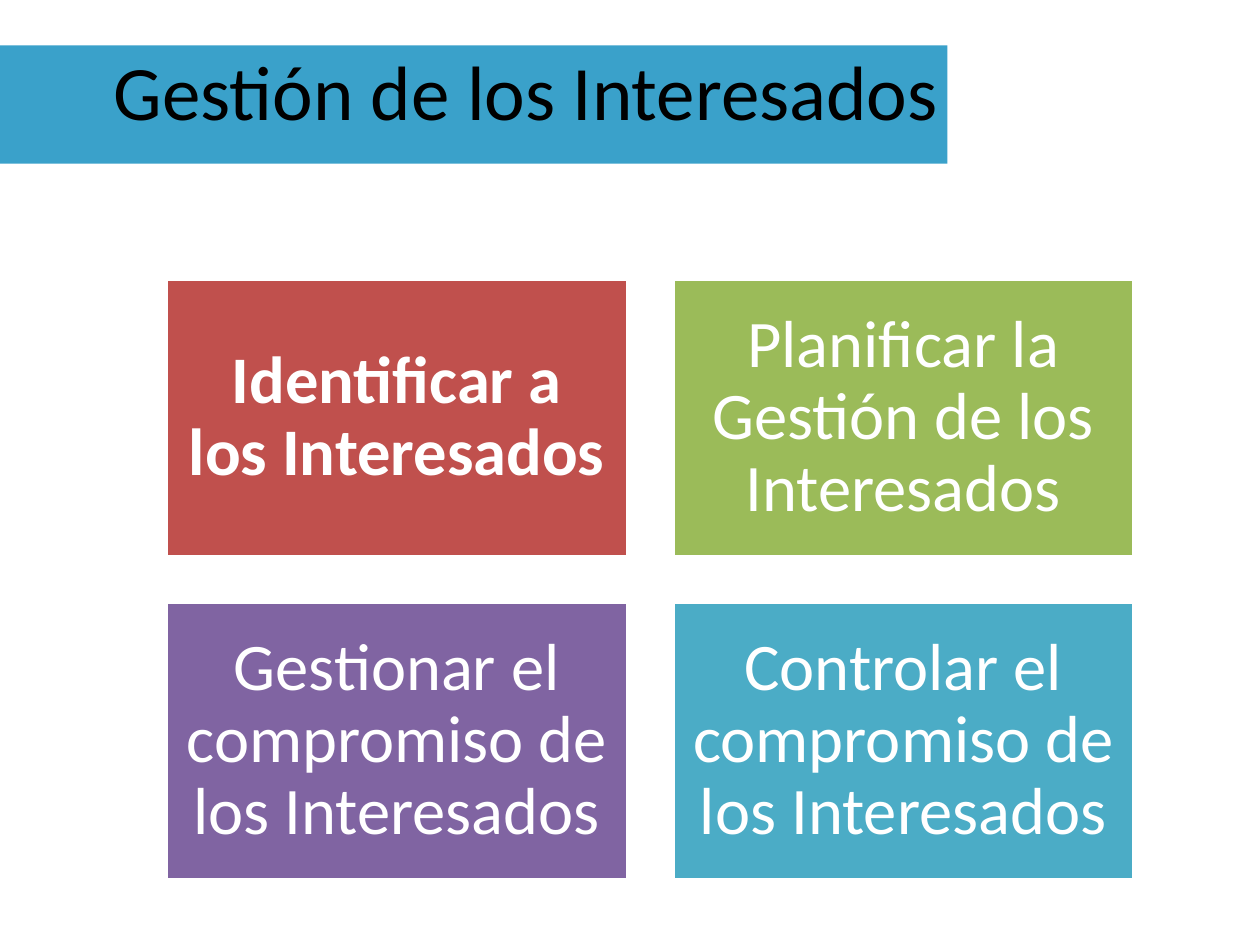
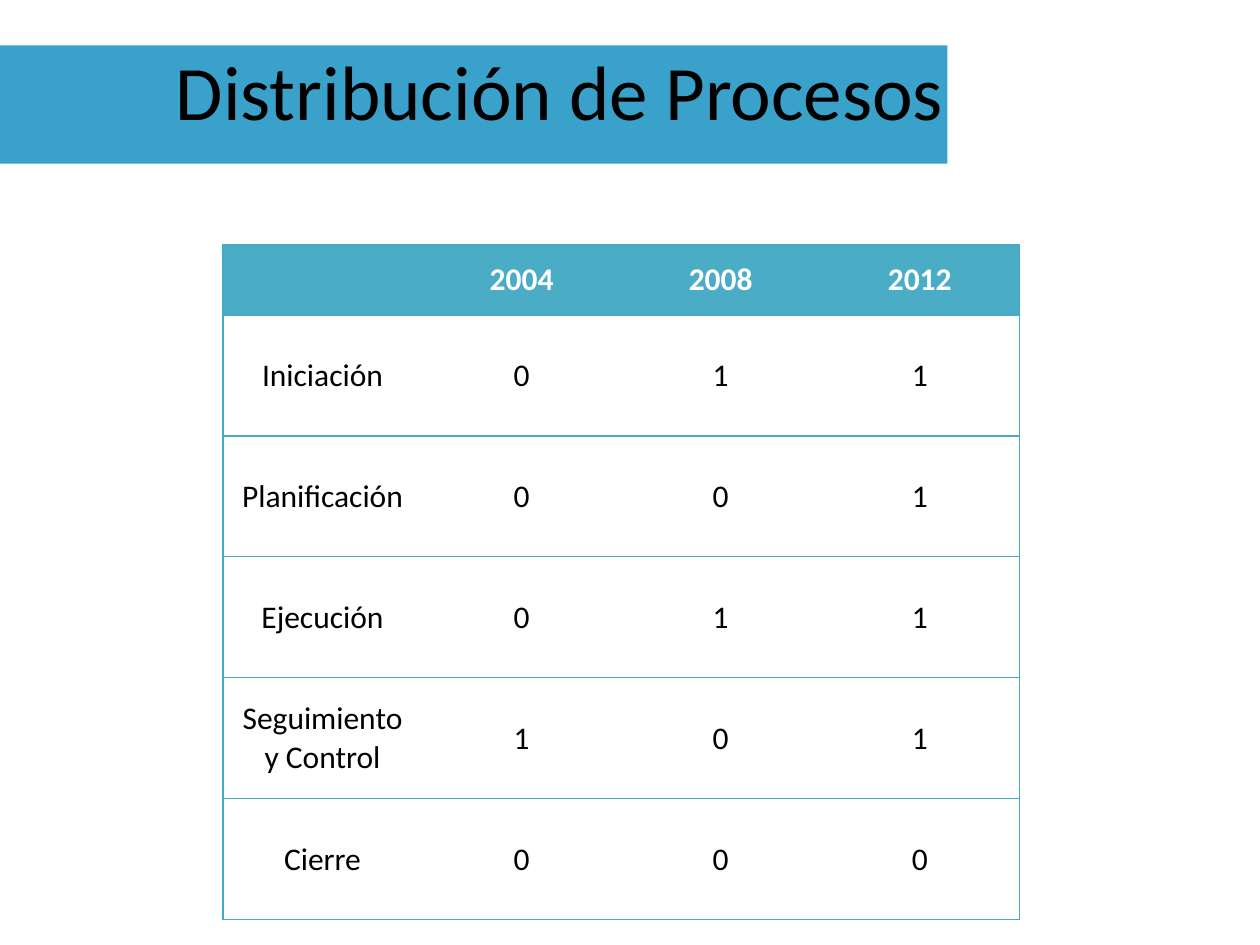
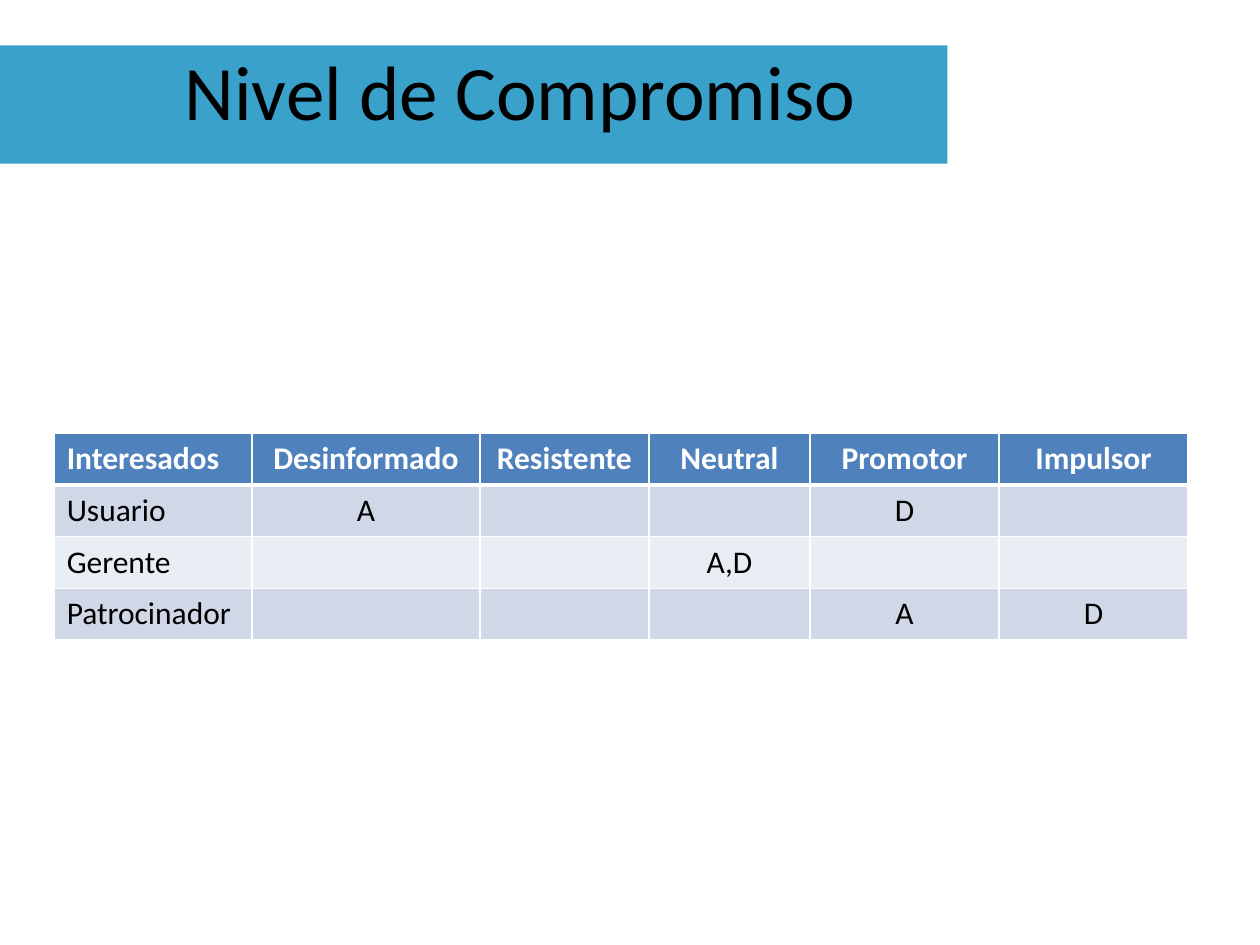
from lxml.etree import SubElement
from pptx import Presentation
from pptx.dml.color import RGBColor
from pptx.enum.shapes import MSO_SHAPE
from pptx.enum.text import MSO_ANCHOR, PP_ALIGN
from pptx.oxml.ns import qn
from pptx.util import Inches, Pt

FONT = "Calibri"
COLORS = {
    "band": "3AA1CA", "black": "000000", "white": "FFFFFF",
    "red": "C0504D", "green": "9BBB59", "purple": "8064A2", "aqua": "4BACC6",
    "rule": "46AAC5", "blue": "4F81BD", "odd_row": "D0D8E8", "even_row": "E9EDF4",
}

CARDS = [
    ("Identificar a los Interesados", "red", True),
    ("Planificar la Gestión de los Interesados", "green", False),
    ("Gestionar el compromiso de los Interesados", "purple", False),
    ("Controlar el compromiso de los Interesados", "aqua", False),
]
CARD_LEFT, CARD_TOP, CARD_WIDTH, CARD_HEIGHT, CARD_GAP = 1.32, 2.22, 3.66, 2.2, 0.36

PROCESSES = [
    ["", "2004", "2008", "2012"],
    ["Iniciación", "0", "1", "1"],
    ["Planificación", "0", "0", "1"],
    ["Ejecución", "0", "1", "1"],
    ["Seguimiento y Control", "1", "0", "1"],
    ["Cierre", "0", "0", "0"],
]

ENGAGEMENT = [
    ["Interesados", "Desinformado", "Resistente", "Neutral", "Promotor", "Impulsor"],
    ["Usuario", "A", "", "", "D", ""],
    ["Gerente", "", "", "A,D", "", ""],
    ["Patrocinador", "", "", "", "A", "D"],
]


def rgb(name):
    return RGBColor.from_string(COLORS[name])


def write(frame, text, size, color, bold=False, align=PP_ALIGN.CENTER):
    paragraph = frame.paragraphs[0]
    paragraph.text = text
    paragraph.alignment = align
    font = paragraph.font
    font.name, font.size, font.bold = FONT, Pt(size), bold
    font.color.rgb = rgb(color)
    return paragraph


def add_block(slide, left, top, width, height, color):
    block = slide.shapes.add_shape(
        MSO_SHAPE.RECTANGLE, Inches(left), Inches(top), Inches(width), Inches(height))
    block.shadow.inherit = False
    block.fill.solid()
    block.fill.fore_color.rgb = rgb(color)
    block.line.fill.background()
    return block


def add_titled_slide(deck, title, left, width):
    """Add a slide with the shared band and a title centred in the given span."""
    slide = deck.slides.add_slide(deck.slide_layouts[6])
    add_block(slide, 0, 0.36, 7.52, 0.94, "band")
    heading = slide.shapes.add_textbox(
        Inches(left), Inches(0.3), Inches(width), Inches(1.25)).text_frame
    heading.word_wrap = True
    write(heading, title, 44, "black")
    return slide


def add_card(slide, index, text, color, bold):
    row, column = divmod(index, 2)
    card = add_block(slide, CARD_LEFT + column * (CARD_WIDTH + CARD_GAP),
                     CARD_TOP + row * (CARD_HEIGHT + CARD_GAP),
                     CARD_WIDTH, CARD_HEIGHT, color)
    card.line.color.rgb = rgb("white")
    card.line.width = Pt(2)
    frame = card.text_frame
    frame.word_wrap = True
    frame.vertical_anchor = MSO_ANCHOR.MIDDLE
    frame.margin_left = frame.margin_right = Inches(0.16)
    frame.margin_top = frame.margin_bottom = Inches(0.16)
    write(frame, text, 38, "white", bold).line_spacing = 0.9


def set_borders(cell, color, left, right, top, bottom):
    """Draw the four sides with widths in points; a width of 0 draws none."""
    properties = cell._tc.get_or_add_tcPr()
    for side, width in zip("LRTB", (left, right, top, bottom)):
        line = SubElement(properties, qn(f"a:ln{side}"), w=str(Pt(width)))
        if width:
            fill = SubElement(line, qn("a:solidFill"))
            SubElement(fill, qn("a:srgbClr"), val=COLORS[color])
        else:
            SubElement(line, qn("a:noFill"))


def add_grid(slide, left, top, widths, heights, rows, style_cell):
    """Add a table; style_cell(cell, row, column) sets its borders, fill and anchor."""
    table = slide.shapes.add_table(
        len(rows), len(widths), Inches(left), Inches(top),
        Inches(sum(widths)), Inches(sum(heights))).table
    table.horz_banding = False
    for column, width in zip(table.columns, widths):
        column.width = Inches(width)
    for row, height in zip(table.rows, heights):
        row.height = Inches(height)
    for r, texts in enumerate(rows):
        for c, text in enumerate(texts):
            cell = table.cell(r, c)
            style_cell(cell, r, c)
            write(cell.text_frame, text, 18, "black" if r else "white", bold=r == 0)
    return table


def fill_cell(cell, color):
    cell.fill.solid()
    cell.fill.fore_color.rgb = rgb(color)


def style_process(cell, row, column):
    last = len(PROCESSES[0]) - 1
    set_borders(cell, "rule", 0.75 * (column == 0), 0.75 * (column == last), 0.75, 0.75)
    cell.vertical_anchor = MSO_ANCHOR.MIDDLE
    if row == 0:
        fill_cell(cell, "aqua")
    else:
        cell.fill.background()


def style_engagement(cell, row, column):
    set_borders(cell, "white", 1, 1, 3 if row == 1 else 1, 3 if row == 0 else 1)
    fill_cell(cell, "blue" if row == 0 else "odd_row" if row % 2 else "even_row")


def main():
    deck = Presentation()
    deck.slide_width, deck.slide_height = Inches(10), Inches(7.5)

    management = add_titled_slide(deck, "Gestión de los Interesados", 0.35, 7.65)
    for index, card in enumerate(CARDS):
        add_card(management, index, *card)

    distribution = add_titled_slide(deck, "Distribución de Procesos", 0.5, 7.89)
    add_grid(distribution, 1.77, 1.94, [1.58] * 4, [0.56] + [0.96] * 5,
             PROCESSES, style_process)

    commitment = add_titled_slide(deck, "Nivel de Compromiso", 0.5, 7.26)
    levels = add_grid(commitment, 0.43, 3.44, [1.57, 1.81, 1.34, 1.28, 1.5, 1.5],
                      [0.41] * 4, ENGAGEMENT, style_engagement)
    for row in range(len(ENGAGEMENT)):
        levels.cell(row, 0).text_frame.paragraphs[0].alignment = PP_ALIGN.LEFT

    deck.save("out.pptx")


if __name__ == "__main__":
    main()
